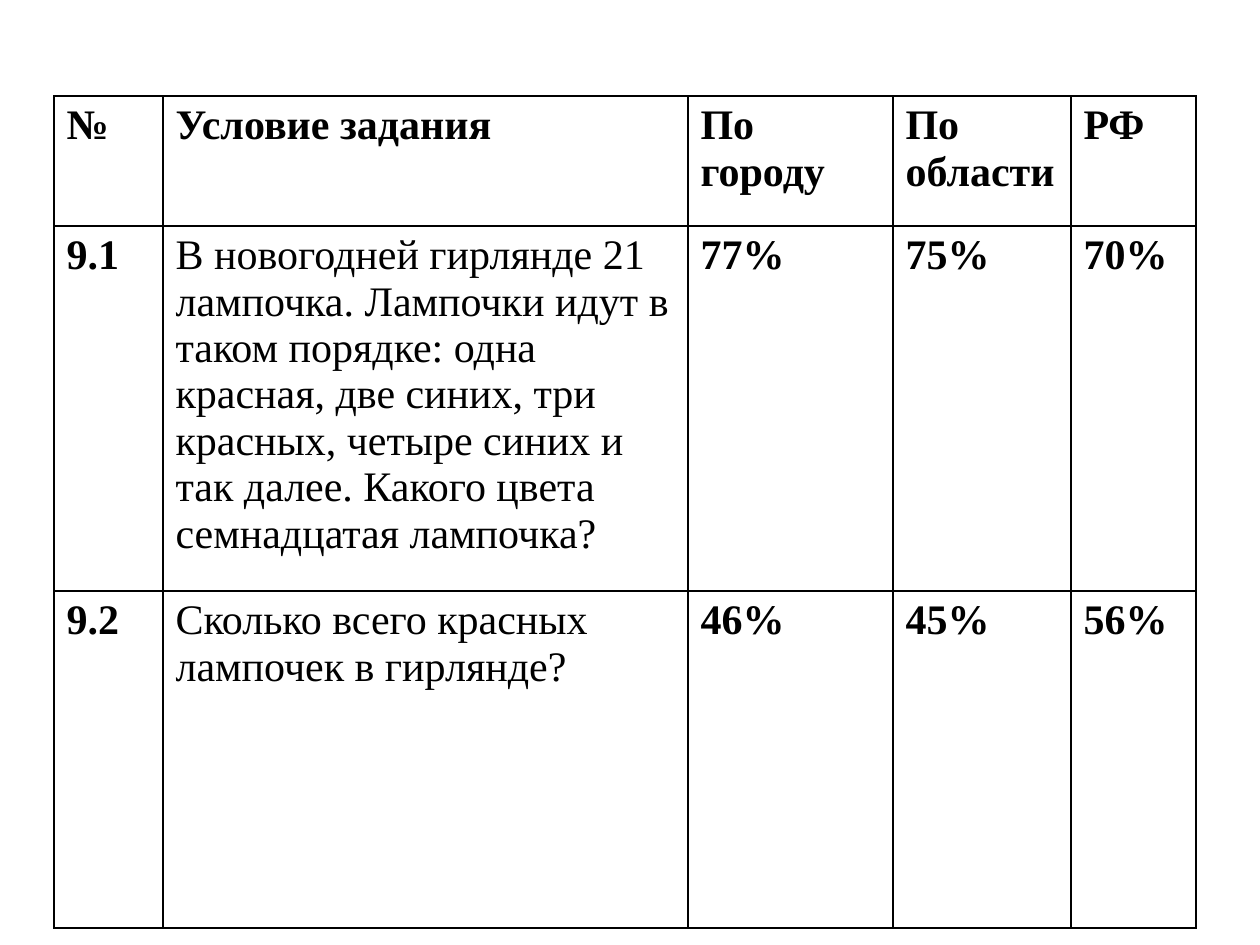
from pptx import Presentation
from pptx.dml.color import RGBColor as Color
from pptx.oxml import parse_xml
from pptx.oxml.ns import nsdecls
from pptx.util import Emu, Pt

SCALE = 914400 / 126
HEADER = ["№", "Условие задания", "По городу", "По области", "РФ"]
TASKS = [
    ["9.1", "В новогодней гирлянде 21 лампочка. Лампочки идут в таком порядке: "
     "одна красная, две синих, три красных, четыре синих и так далее. "
     "Какого цвета семнадцатая лампочка?", "77%", "75%", "70%"],
    ["9.2", "Сколько всего красных лампочек в гирлянде?", "46%", "45%", "56%"],
]
COLUMN_WIDTHS = [109, 525, 205, 178, 125]
ROW_HEIGHTS = [130, 365, 337]


def px(length):
    return Emu(round(length * SCALE))


def color(value):
    return Color.from_string(value)


def write(frame, text, font="Times New Roman", size=24, bold=False, ink="000000"):
    span = frame.paragraphs[0].add_run()
    span.text = text
    span.font.name = font
    span.font.size = Pt(size)
    span.font.bold = bold
    span.font.color.rgb = color(ink)


class TaskPage:
    def __init__(self, deck, ink="000000", paper="FFFFFF", border=1):
        self.page = deck.slides.add_slide(deck.slide_layouts[6])
        self.ink = ink
        self.paper = paper
        self.border = border

    def outline(self, cell):
        properties = cell._tc.get_or_add_tcPr()
        for index, side in enumerate("LRTB"):
            properties.insert(index, parse_xml(
                f'<a:ln{side} {nsdecls("a")} w="{Pt(self.border)}">'
                f'<a:solidFill><a:srgbClr val="{self.ink}"/></a:solidFill>'
                f'</a:ln{side}>'))

    def table(self, left, top, widths, heights, rows):
        table = self.page.shapes.add_table(
            len(rows), len(widths), px(left), px(top),
            px(sum(widths)), px(sum(heights))).table
        table.first_row = False
        table.horz_banding = False
        for column, width in zip(table.columns, widths):
            column.width = px(width)
        for row, height in zip(table.rows, heights):
            row.height = px(height)
        for row_index, texts in enumerate(rows):
            for column_index, text in enumerate(texts):
                cell = table.cell(row_index, column_index)
                cell.fill.solid()
                cell.fill.fore_color.rgb = color(self.paper)
                self.outline(cell)
                is_condition = row_index > 0 and column_index == 1
                write(cell.text_frame, text, bold=not is_condition, ink=self.ink)


def main():
    deck = Presentation()
    deck.slide_width = px(1260)
    deck.slide_height = px(945)
    TaskPage(deck).table(54, 96, COLUMN_WIDTHS, ROW_HEIGHTS, [HEADER, *TASKS])
    deck.save("out.pptx")


if __name__ == "__main__":
    main()
